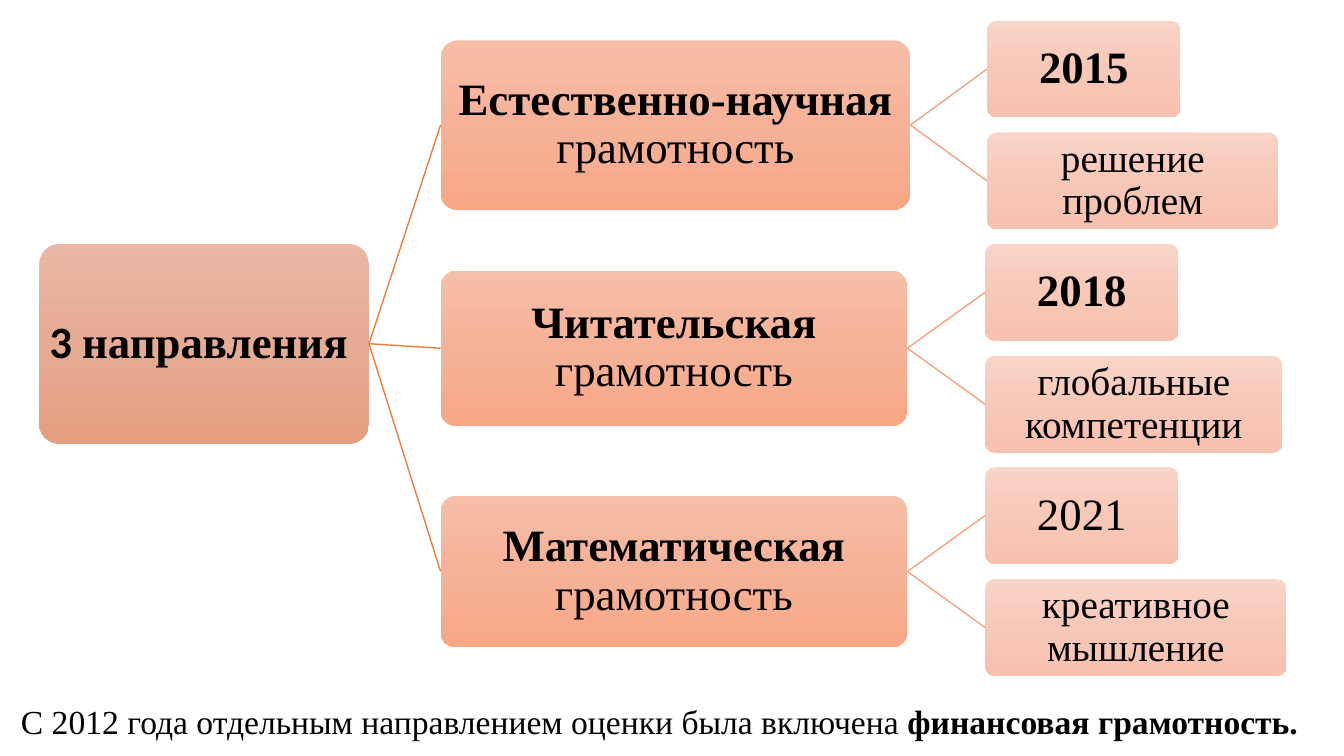
from copy import deepcopy
from dataclasses import dataclass

from lxml.etree import SubElement
from pptx import Presentation
from pptx.dml.color import RGBColor
from pptx.enum.shapes import MSO_CONNECTOR as Link, MSO_SHAPE as Kind
from pptx.enum.text import MSO_ANCHOR as Anchor, PP_ALIGN as Align
from pptx.oxml.ns import qn
from pptx.shapes.autoshape import Shape
from pptx.text.text import _Paragraph as Para
from pptx.util import Inches, Pt

BLACK = RGBColor(0x00, 0x00, 0x00)
ROOT_LINE = RGBColor(0xED, 0x7F, 0x39)
LEAF_LINE = RGBColor(0xF1, 0xA3, 0x83)
ROOT_FILL = (RGBColor(0xEA, 0xB7, 0xA3), RGBColor(0xE6, 0xAB, 0x95), RGBColor(0xE7, 0x9E, 0x81))
BRANCH_FILL = (RGBColor(0xF7, 0xBE, 0xA7), RGBColor(0xF5, 0xB2, 0x98), RGBColor(0xF8, 0xA7, 0x85))
LEAF_FILL = (RGBColor(0xF9, 0xD4, 0xC8), RGBColor(0xF7, 0xC8, 0xB8), RGBColor(0xF8, 0xC0, 0xAD))
SERIF = "Times New Roman"
RIGHT, LEFT = 3, 1

BRANCH_X = 4.37
FIRST_MID, PITCH = 1.24, 2.215
LEAF_H, LEAF_STEP = 0.96, 0.555
YEAR_W = 1.92


@dataclass
class Run:
    text: str
    size: int = 32
    bold: bool = False
    font: str = SERIF


@dataclass
class Branch:
    name: str
    width: float
    height: float
    leaf_x: float
    year: Run
    skill: str
    skill_w: float


BRANCHES = [
    Branch("Естественно-научная ", 4.66, 1.68, 9.79, Run("2015", bold=True),
           "решение проблем", 2.89),
    Branch("Читательская ", 4.63, 1.54, 9.77, Run("2018", bold=True),
           "глобальные компетенции", 2.95),
    Branch("Математическая ", 4.63, 1.5, 9.77, Run("2021"),
           "креативное мышление", 2.99),
]

deck = Presentation()
deck.slide_width, deck.slide_height = Inches(13.33), Inches(7.5)
slide = deck.slides.add_slide(deck.slide_layouts[6])


def write(para: Para, runs: list[Run]) -> None:
    para.alignment = Align.CENTER
    for item in runs:
        run = para.add_run()
        run.text = item.text
        run.font.name = item.font
        run.font.size = Pt(item.size)
        run.font.bold = item.bold
        run.font.color.rgb = BLACK


def shade(box: Shape, colors: tuple[RGBColor, ...]) -> None:
    """Fill from top to bottom with three evenly spaced colours."""
    box.fill.gradient()
    box.fill.gradient_angle = 270
    first = box.element.spPr.find(".//" + qn("a:gs"))
    first.addnext(deepcopy(first))
    for i, (stop, color) in enumerate(zip(box.fill.gradient_stops, colors)):
        stop.position = i / 2
        stop.color.rgb = color


def add_box(left: float, mid: float, width: float, height: float,
            colors: tuple[RGBColor, ...], runs: list[Run]) -> Shape:
    box = slide.shapes.add_shape(Kind.ROUNDED_RECTANGLE, Inches(left), Inches(mid - height / 2),
                                 Inches(width), Inches(height))
    box.adjustments[0] = 0.1
    box.shadow.inherit = False
    box.line.fill.background()
    shade(box, colors)
    frame = box.text_frame
    frame.word_wrap = True
    frame.vertical_anchor = Anchor.MIDDLE
    frame.margin_left = frame.margin_right = Inches(0.02)
    frame.margin_top = frame.margin_bottom = Inches(0.02)
    frame.paragraphs[0].line_spacing = 0.9
    write(frame.paragraphs[0], runs)
    return box


def join(start: Shape, end: Shape, color: RGBColor) -> None:
    line = slide.shapes.add_connector(Link.STRAIGHT, 0, 0, 0, 0)
    line.begin_connect(start, RIGHT)
    line.end_connect(end, LEFT)
    line.line.color.rgb = color
    line.line.width = Pt(1)
    SubElement(line.element.spPr, qn("a:effectLst"))


root = add_box(0.39, 3.41, 3.27, 1.98, ROOT_FILL,
               [Run("3 ", bold=True, font="Calibri"), Run("направления ", bold=True)])

for row, item in enumerate(BRANCHES):
    mid = FIRST_MID + row * PITCH
    branch = add_box(BRANCH_X, mid, item.width, item.height, BRANCH_FILL,
                     [Run(item.name, bold=True), Run("грамотность")])
    join(root, branch, ROOT_LINE)
    year = add_box(item.leaf_x, mid - LEAF_STEP, YEAR_W, LEAF_H, LEAF_FILL, [item.year])
    skill = add_box(item.leaf_x, mid + LEAF_STEP, item.skill_w, LEAF_H, LEAF_FILL,
                    [Run(item.skill, 28)])
    for leaf in (year, skill):
        join(branch, leaf, LEAF_LINE)

note = slide.shapes.add_textbox(Inches(0.08), Inches(6.9), Inches(12.92), Inches(0.5))
note.text_frame.word_wrap = False
write(note.text_frame.paragraphs[0], [
    Run("С 2012 года отдельным направлением оценки была включена ", 24),
    Run("финансовая грамотность.", 24, bold=True),
])

deck.save("out.pptx")
